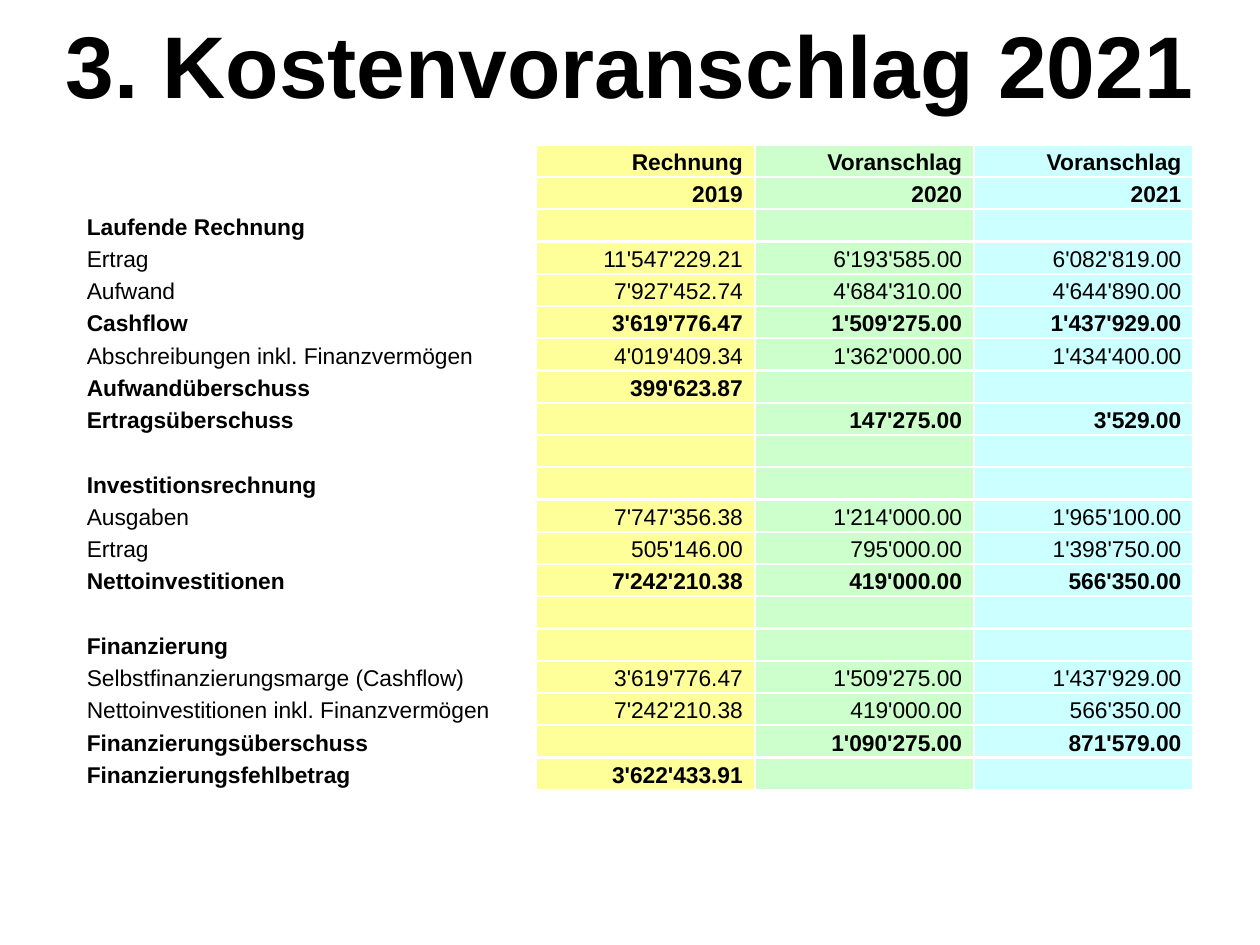
from dataclasses import dataclass

from lxml import etree
from pptx import Presentation
from pptx.dml.color import RGBColor
from pptx.enum.text import MSO_ANCHOR, MSO_AUTO_SIZE, PP_ALIGN
from pptx.oxml.ns import qn
from pptx.util import Cm, Pt

LEFT, CENTER, RIGHT = PP_ALIGN.LEFT, PP_ALIGN.CENTER, PP_ALIGN.RIGHT
MIDDLE, BOTTOM = MSO_ANCHOR.MIDDLE, MSO_ANCHOR.BOTTOM
NO_AUTOFIT = MSO_AUTO_SIZE.NONE
TITLE_ONLY = 5


@dataclass(frozen=True)
class Theme:
    font: str = "Arial"
    ink: str = "000000"
    border: str = "FFFFFF"
    year_fills: tuple = ("FFFF99", "CCFFCC", "CCFFFF")
    title_size: int = 50
    table_size: int = 13
    border_width: float = 1.5


THEME = Theme()

# Each budget row: bold, label, then the amounts for 2019, 2020 and 2021
BUDGET = [
    (True, "", "Rechnung", "Voranschlag", "Voranschlag"),
    (True, "", "2019", "2020", "2021"),
    (True, "Laufende Rechnung", "", "", ""),
    (False, "Ertrag", "11'547'229.21", "6'193'585.00", "6'082'819.00"),
    (False, "Aufwand", "7'927'452.74", "4'684'310.00", "4'644'890.00"),
    (True, "Cashflow", "3'619'776.47", "1'509'275.00", "1'437'929.00"),
    (False, "Abschreibungen inkl. Finanzvermögen",
     "4'019'409.34", "1'362'000.00", "1'434'400.00"),
    (True, "Aufwandüberschuss", "399'623.87", "", ""),
    (True, "Ertragsüberschuss", "", "147'275.00", "3'529.00"),
    (False, "", "", "", ""),
    (True, "Investitionsrechnung", "", "", ""),
    (False, "Ausgaben", "7'747'356.38", "1'214'000.00", "1'965'100.00"),
    (False, "Ertrag", "505'146.00", "795'000.00", "1'398'750.00"),
    (True, "Nettoinvestitionen", "7'242'210.38", "419'000.00", "566'350.00"),
    (False, "", "", "", ""),
    (True, "Finanzierung", "", "", ""),
    (False, "Selbstfinanzierungsmarge (Cashflow)",
     "3'619'776.47", "1'509'275.00", "1'437'929.00"),
    (False, "Nettoinvestitionen inkl. Finanzvermögen",
     "7'242'210.38", "419'000.00", "566'350.00"),
    (True, "Finanzierungsüberschuss", "", "1'090'275.00", "871'579.00"),
    (True, "Finanzierungsfehlbetrag", "3'622'433.91", "", ""),
]


def add_text(paragraph, text, size, bold):
    run = paragraph.add_run()
    run.text = text
    run.font.name = THEME.font
    run.font.size = Pt(size)
    run.font.bold = bold
    run.font.color.rgb = RGBColor.from_string(THEME.ink)


def fill_title(title, text):
    title.left, title.top = Cm(0), Cm(0)
    title.width, title.height = Cm(25.4), Cm(2.38)
    frame = title.text_frame
    frame.auto_size = NO_AUTOFIT
    frame.vertical_anchor = BOTTOM
    frame.margin_bottom = Cm(0.04)
    heading = frame.paragraphs[0]
    heading.alignment = CENTER
    heading.line_spacing = 1.0
    add_text(heading, text, THEME.title_size, True)


def set_borders(cell):
    """Border lines come before the fill in the cell properties."""
    properties = cell._tc.get_or_add_tcPr()
    for position, side in enumerate(("a:lnL", "a:lnR", "a:lnT", "a:lnB")):
        line = etree.Element(qn(side), w=str(Pt(THEME.border_width)))
        solid = etree.SubElement(line, qn("a:solidFill"))
        etree.SubElement(solid, qn("a:srgbClr"), val=THEME.border)
        properties.insert(position, line)


def fill_cell(cell, text, bold, alignment, fill):
    cell.vertical_anchor = MIDDLE
    cell.margin_left = cell.margin_right = Cm(0.25)
    cell.margin_top = cell.margin_bottom = Cm(0)
    if fill:
        cell.fill.solid()
        cell.fill.fore_color.rgb = RGBColor.from_string(fill)
    else:
        cell.fill.background()
    set_borders(cell)

    entry = cell.text_frame.paragraphs[0]
    entry.alignment = alignment
    if text:
        entry.line_spacing = 1.15
        entry.space_after = Pt(10)
        add_text(entry, text, THEME.table_size, bold)
    else:
        # An empty cell needs the small type size to keep its row height
        etree.SubElement(entry._p, qn("a:endParaRPr"),
                         sz=str(THEME.table_size * 100))


def add_budget_table(slide):
    widths = [Cm(9.3)] + [Cm(4.42)] * len(THEME.year_fills)
    row_height = Cm(0.65)
    budget = slide.shapes.add_table(
        len(BUDGET), len(widths), Cm(1.5), Cm(2.92),
        sum(widths), row_height * len(BUDGET)).table
    budget.first_row = budget.horz_banding = False
    for column, width in zip(budget.columns, widths):
        column.width = width

    fills = (None,) + THEME.year_fills
    for row, (bold, *entries) in zip(budget.rows, BUDGET):
        row.height = row_height
        for cell, text, fill in zip(row.cells, entries, fills):
            fill_cell(cell, text, bold, RIGHT if fill else LEFT, fill)


def main():
    presentation = Presentation()
    presentation.slide_width, presentation.slide_height = Cm(25.4), Cm(19.05)
    slide = presentation.slides.add_slide(
        presentation.slide_layouts[TITLE_ONLY])

    # Heading
    fill_title(slide.shapes.title, "3. Kostenvoranschlag 2021")

    # Budget by year
    add_budget_table(slide)

    presentation.save("out.pptx")


if __name__ == "__main__":
    main()
